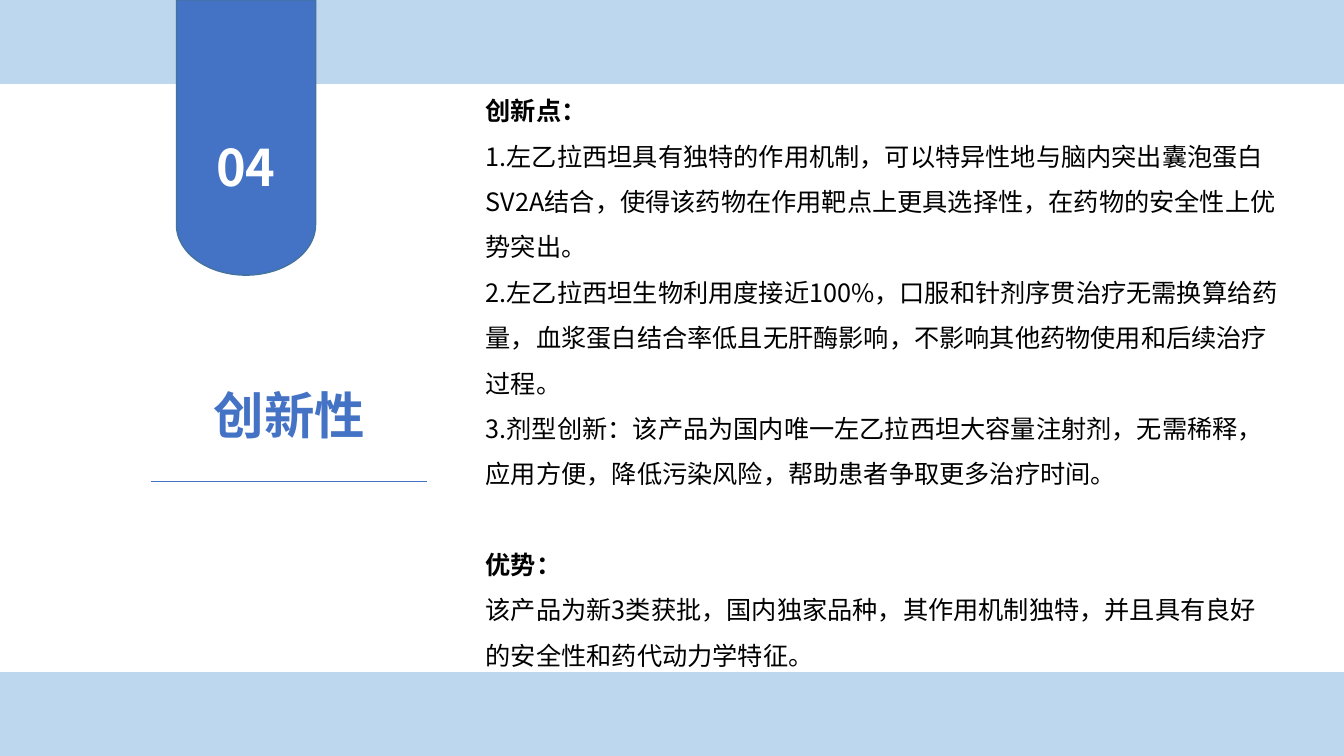
import math
from lxml import etree
from pptx import Presentation
from pptx.dml.color import RGBColor
from pptx.enum.shapes import MSO_CONNECTOR, MSO_SHAPE
from pptx.enum.text import MSO_ANCHOR, PP_ALIGN
from pptx.oxml.ns import qn
from pptx.util import Inches, Pt

RECTANGLE = MSO_SHAPE.RECTANGLE
STRAIGHT = MSO_CONNECTOR.STRAIGHT
MIDDLE = MSO_ANCHOR.MIDDLE
LEFT, CENTER = PP_ALIGN.LEFT, PP_ALIGN.CENTER
CJK_FONT = "Noto Sans CJK SC"
COLORS = {"band": "BDD7EE", "blue": "4472C4", "edge": "43739E",
          "white": "FFFFFF", "black": "000000"}


def color(name):
    return RGBColor.from_string(COLORS[name])


def write(paragraph, text, size=18, font=CJK_FONT, ink="black", bold=False,
          align=LEFT, spacing=1.0, before=0):
    paragraph.alignment = align
    paragraph.line_spacing = spacing
    paragraph.space_before = Pt(before)
    run = paragraph.add_run()
    run.text = text
    run.font.size = Pt(size)
    run.font.name = font
    run.font.bold = bold
    run.font.color.rgb = color(ink)
    east_asian = etree.SubElement(run.font._element, qn("a:ea"))
    east_asian.set("typeface", CJK_FONT)


prs = Presentation()
prs.slide_width, prs.slide_height = Inches(13.33), Inches(7.5)
slide = prs.slides.add_slide(prs.slide_layouts[6])
shapes = slide.shapes

# Bands along the top and bottom edges
for top in (0, 6.67):
    band = shapes.add_shape(RECTANGLE, 0, Inches(top), prs.slide_width, Inches(0.83))
    band.shadow.inherit = False
    band.fill.solid()
    band.fill.fore_color.rgb = color("band")
    band.line.color.rgb = color("band")
    band.line.width = Pt(1)

# Hanging ribbon with a half-ellipse end
left, right, arc_top, arc_height = 1.75, 3.13, 2.23, 0.5
center, radius = (left + right) / 2, (right - left) / 2
arc = [(Inches(center + radius * math.cos(math.radians(angle))),
        Inches(arc_top + arc_height * math.sin(math.radians(angle))))
       for angle in range(0, 181, 3)]
outline = shapes.build_freeform(Inches(left), 0)
outline.add_line_segments([(Inches(right), 0)] + arc, close=True)
ribbon = outline.convert_to_shape()
ribbon.shadow.inherit = False
ribbon.fill.solid()
ribbon.fill.fore_color.rgb = color("blue")
ribbon.line.color.rgb = color("edge")
ribbon.line.width = Pt(1)

# Section number
number = shapes.add_shape(RECTANGLE, Inches(2.01), Inches(1.3), Inches(0.86), Inches(0.71))
number.shadow.inherit = False
number.fill.solid()
number.fill.fore_color.rgb = color("blue")
number.line.fill.background()
number.text_frame.vertical_anchor = MIDDLE
write(number.text_frame.paragraphs[0], "04", size=36, ink="white", bold=True, align=CENTER)

# Innovation points and advantages
body = shapes.add_textbox(Inches(4.72), Inches(0.75), Inches(8.07), Inches(6.01)).text_frame
body.word_wrap = True
sections = [
    ("创新点：", [
        "1.左乙拉西坦具有独特的作用机制，可以特异性地与脑内突出囊泡蛋白SV2A结合，使得该药物在作用靶点上更具选择性，在药物的安全性上优势突出。",
        "2.左乙拉西坦生物利用度接近100%，口服和针剂序贯治疗无需换算给药量，血浆蛋白结合率低且无肝酶影响，不影响其他药物使用和后续治疗过程。",
        "3.剂型创新：该产品为国内唯一左乙拉西坦大容量注射剂，无需稀释，应用方便，降低污染风险，帮助患者争取更多治疗时间。",
    ]),
    ("优势：", [
        "该产品为新3类获批，国内独家品种，其作用机制独特，并且具有良好的安全性和药代动力学特征。",
    ]),
]
for index, (heading, points) in enumerate(sections):
    paragraph = body.add_paragraph() if index else body.paragraphs[0]
    write(paragraph, heading, bold=True, spacing=1.5, before=32.4 * index)
    for point in points:
        write(body.add_paragraph(), point, spacing=1.5)

# Section title with its rule
title = shapes.add_textbox(Inches(2.02), Inches(3.76), Inches(1.7), Inches(0.71)).text_frame
title.word_wrap = False
write(title.paragraphs[0], "创新性", size=36, font="Calibri", ink="blue", bold=True, align=CENTER)

rule = shapes.add_connector(STRAIGHT, Inches(1.5), Inches(4.78), Inches(4.24), Inches(4.78))
rule.line.color.rgb = color("blue")
rule.line.width = Pt(0.5)
etree.SubElement(rule._element.spPr, qn("a:effectLst"))

prs.save("out.pptx")
